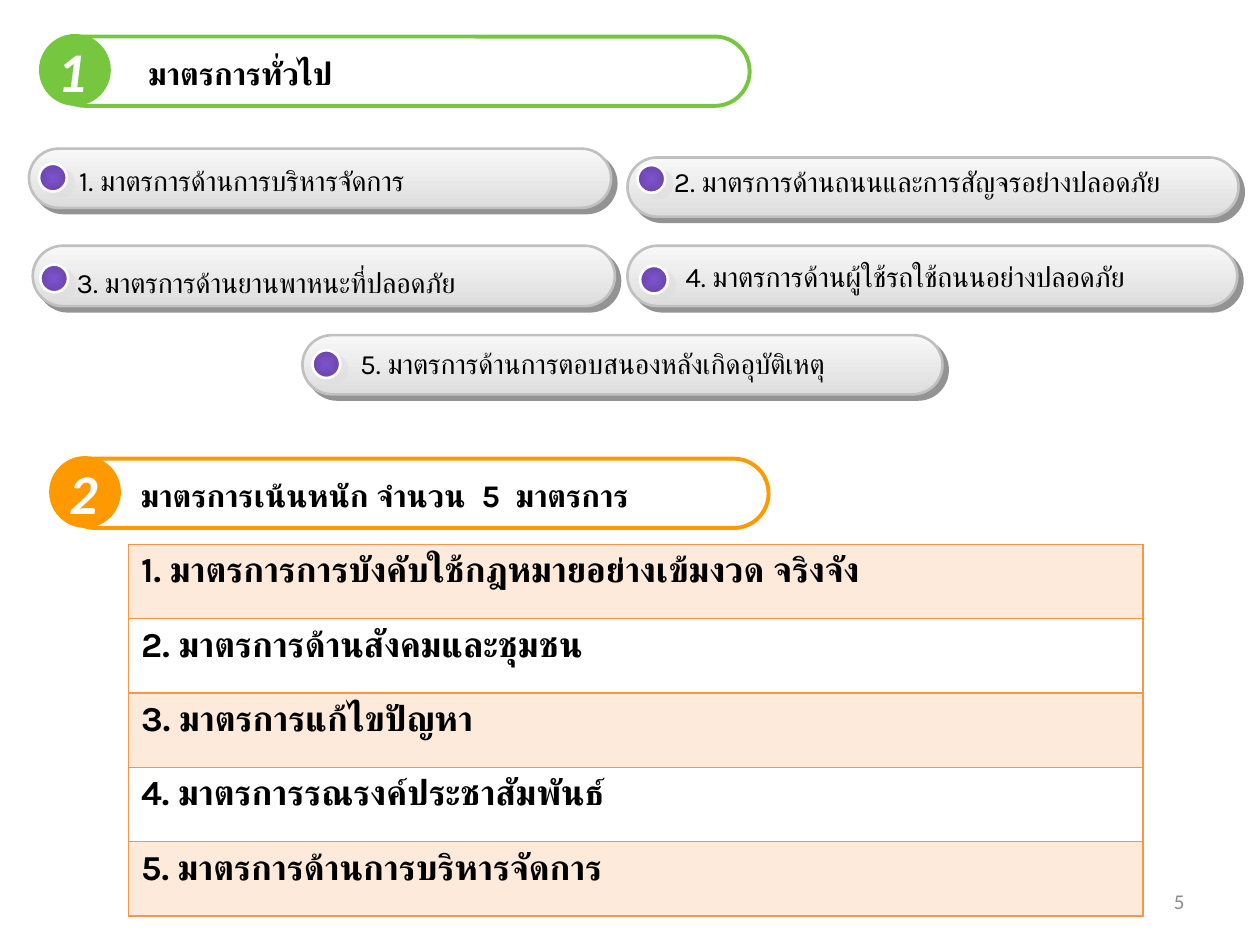
from lxml import etree
from pptx import Presentation
from pptx.dml.color import RGBColor
from pptx.enum.shapes import MSO_SHAPE as SHAPE
from pptx.enum.text import MSO_ANCHOR as ANCHOR, MSO_AUTO_SIZE as AUTO_SIZE, PP_ALIGN as ALIGN
from pptx.oxml import parse_xml
from pptx.oxml.ns import nsdecls, qn
from pptx.util import Inches, Pt


def write(frame, text, align=ALIGN.LEFT, space_before=False, **font_values):
    """Put one formatted paragraph in a text frame, with the font set for Thai too."""
    paragraph = frame.paragraphs[0]
    paragraph.alignment = align
    if space_before:
        properties = paragraph._p.get_or_add_pPr()
        spacing = etree.SubElement(properties, qn("a:spcBef"))
        etree.SubElement(spacing, qn("a:spcPct"), val="50000")
    run = paragraph.add_run()
    run.text = text
    run.font.color.rgb = RGBColor.from_string(font_values.pop("color", "000000"))
    for name, value in font_values.items():
        setattr(run.font, name, value)
    etree.SubElement(run._r.get_or_add_rPr(), qn("a:cs"), typeface=run.font.name)


def add_outline(kind, box, fill=None, line=None, width=1.5, shadow=None):
    """Add a preset shape; fill is one colour or a gradient pair, shadow is (colour, points, degrees)."""
    shape = slide.shapes.add_shape(kind, *map(Inches, box))
    shape.shadow.inherit = False
    if kind == SHAPE.ROUNDED_RECTANGLE:
        shape.adjustments[0] = 0.5
    if isinstance(fill, tuple):
        shape.fill.gradient()
        shape.fill.gradient_angle = 270
        for stop, color, position in zip(shape.fill.gradient_stops, fill, (0, 1)):
            stop.color.rgb = RGBColor.from_string(color)
            stop.position = position
    elif fill:
        shape.fill.solid()
        shape.fill.fore_color.rgb = RGBColor.from_string(fill)
    else:
        shape.fill.background()
    if line:
        shape.line.color.rgb = RGBColor.from_string(line)
        shape.line.width = Pt(width)
    else:
        shape.line.fill.background()
    if shadow:
        color, distance, angle = shadow
        effects = shape._element.spPr.find(qn("a:effectLst"))
        effects.append(parse_xml(
            f'<a:outerShdw {nsdecls("a")} dist="{Pt(distance)}" dir="{angle * 60000}" algn="ctr" rotWithShape="0">'
            f'<a:srgbClr val="{color}"><a:alpha val="50000"/></a:srgbClr></a:outerShdw>'))
    return shape


presentation = Presentation()
presentation.slide_width, presentation.slide_height = Inches(10), Inches(7.5)
slide = presentation.slides.add_slide(presentation.slide_layouts[6])

# Section headings: outlined bar, numbered disc, title
headings = [
    ("1", "มาตรการทั่วไป", "76C73F", (0.4, 0.29, 5.55, 0.55), (0.36, 0.24, 0.36, 0.63), (1.08, 0.38, 4.78, 0.4)),
    ("2", "มาตรการเน้นหนัก จำนวน  5  มาตรการ", "FF9900", (0.48, 3.64, 5.62, 0.55), (0.45, 3.59, 0.38, 0.63),
     (1.02, 3.73, 4.92, 0.41)),
]
for number, title, color, bar_box, number_box, title_box in headings:
    add_outline(SHAPE.ROUNDED_RECTANGLE, bar_box, line=color, width=2.25)
    add_outline(SHAPE.OVAL, (bar_box[0] - 0.09, bar_box[1] - 0.02, 0.57, 0.57), fill=color)
    frame = slide.shapes.add_textbox(*map(Inches, number_box)).text_frame
    frame.word_wrap = False
    frame.auto_size = AUTO_SIZE.SHAPE_TO_FIT_TEXT
    write(frame, number, ALIGN.CENTER, True, name="Calibri", size=Pt(32), bold=True, italic=True, color="FFFFFF")
    frame = slide.shapes.add_textbox(*map(Inches, title_box)).text_frame
    frame.word_wrap = True
    frame.auto_size = AUTO_SIZE.SHAPE_TO_FIT_TEXT
    write(frame, title, space_before=True, name="Karla", size=Pt(18), bold=True)

# General measures: pill box, dot position, text box
measures = [
    ("1. มาตรการด้านการบริหารจัดการ", (0.23, 1.18, 4.62, 0.47), (0.31, 1.3), (0.53, 1.25, 3.91)),
    ("2. มาตรการด้านถนนและการสัญจรอย่างปลอดภัย", (4.98, 1.25, 4.85, 0.47), (5.06, 1.31), (5.25, 1.26, 4.68)),
    ("3. มาตรการด้านยานพาหนะที่ปลอดภัย", (0.26, 1.95, 4.62, 0.48), (0.32, 2.1), (0.51, 2.06, 3.93)),
    ("4. มาตรการด้านผู้ใช้รถใช้ถนนอย่างปลอดภัย", (4.98, 1.95, 4.84, 0.48), (5.08, 2.11), (5.34, 2.01, 4.79)),
    ("5. มาตรการด้านการตอบสนองหลังเกิดอุบัติเหตุ", (2.4, 2.66, 5.08, 0.47), (2.48, 2.78), (2.76, 2.7, 4.79)),
]
for text, pill_box, dot_position, text_box in measures:
    add_outline(SHAPE.ROUNDED_RECTANGLE, pill_box, ("F8F8F8", "DDDDDD"), "C0C0C0", shadow=("292929", 4.2, 45))
    dot = add_outline(SHAPE.OVAL, (*dot_position, 0.22, 0.22), ("7E52CC", "6A45AB"), "FFFFFF",
                      shadow=("DDDDDD", 5, 37))
    gradient = dot._element.spPr.find(qn("a:gradFill"))
    gradient.replace(gradient.find(qn("a:lin")), parse_xml(
        f'<a:path {nsdecls("a")} path="shape"><a:fillToRect l="50000" t="50000" r="50000" b="50000"/></a:path>'))
    frame = slide.shapes.add_textbox(*map(Inches, (*text_box, 0.37))).text_frame
    frame.word_wrap = True
    frame.auto_size = AUTO_SIZE.SHAPE_TO_FIT_TEXT
    write(frame, text, name="Karla", size=Pt(16))

# Emphasised measures
emphasised = [
    "1. มาตรการการบังคับใช้กฎหมายอย่างเข้มงวด จริงจัง",
    "2. มาตรการด้านสังคมและชุมชน",
    "3. มาตรการแก้ไขปัญหา",
    "4. มาตรการรณรงค์ประชาสัมพันธ์",
    "5. มาตรการด้านการบริหารจัดการ",
]
table = slide.shapes.add_table(len(emphasised), 1, *map(Inches, (1.02, 4.32, 8.05, 2.95))).table
table.first_row = table.horz_banding = False
for index, text in enumerate(emphasised):
    cell = table.cell(index, 0)
    write(cell.text_frame, text, name="Karla", size=Pt(20), bold=True)
    properties = cell._tc.get_or_add_tcPr()
    if index % 2 == 0:
        cell.fill.solid()
        cell.fill.fore_color.rgb = RGBColor.from_string("F79646")
        etree.SubElement(properties.find(".//" + qn("a:srgbClr")), qn("a:alpha"), val="20000")
    else:
        cell.fill.background()
    for position, side in enumerate(("lnL", "lnR", "lnT", "lnB")):
        properties.insert(position, parse_xml(
            f'<a:{side} {nsdecls("a")} w="{Pt(1)}"><a:solidFill><a:srgbClr val="F79646"/></a:solidFill></a:{side}>'))

# Slide number
frame = slide.shapes.add_textbox(*map(Inches, (7.17, 6.95, 2.33, 0.4))).text_frame
frame.word_wrap = True
frame.vertical_anchor = ANCHOR.MIDDLE
write(frame, "5", ALIGN.RIGHT, name="Calibri", size=Pt(12), color="8C8C8C")

presentation.save("out.pptx")
